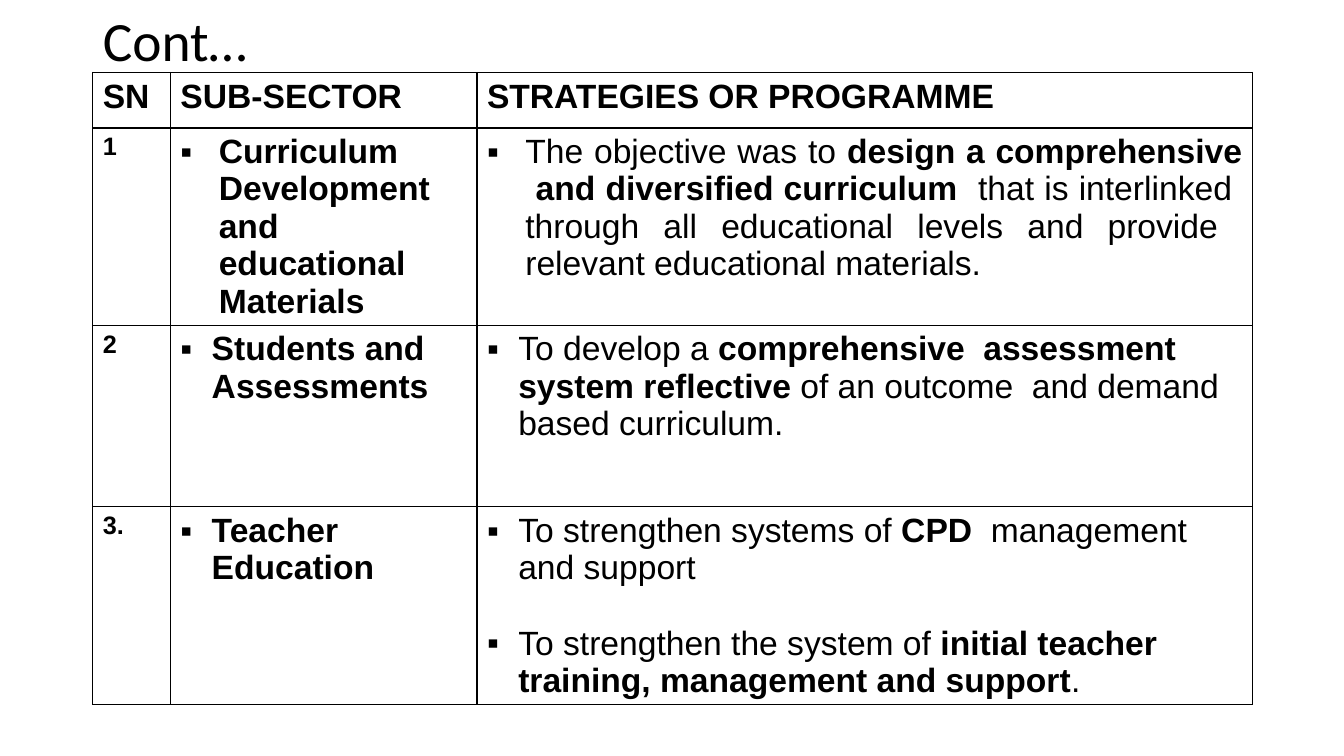
from dataclasses import dataclass

from lxml.etree import SubElement
from pptx import Presentation
from pptx.dml.color import RGBColor
from pptx.enum.text import MSO_ANCHOR as Anchor, PP_ALIGN as Align
from pptx.oxml.ns import qn
from pptx.util import Emu, Inches, Pt

PAGE_WIDTH, PAGE_HEIGHT = Inches(13.33), Inches(7.5)
BLACK = "000000"
LEFT, TITLE_TOP, TABLE_TOP = 6.9, 2.13, 9.6
COLUMN_SHARES = (5.78, 22.81, 57.69)
ROW_SHARES = (7.33, 24.13, 24, 24)
TABLE_WIDTH = sum(COLUMN_SHARES)


@dataclass(frozen=True)
class Entry:
    spans: tuple[str, ...]
    starts_bold: bool = True
    size: float = 24
    indent: float = 0
    align: Align = Align.LEFT
    space_before: float = 0


def across(percent: float) -> Emu:
    return Emu(round(PAGE_WIDTH * percent / 100))


def down(percent: float) -> Emu:
    return Emu(round(PAGE_HEIGHT * percent / 100))


def colour(value: str) -> RGBColor:
    return RGBColor.from_string(value)


def style_font(font, name: str, size: float) -> None:
    font.name, font.size = name, Pt(size)
    font.color.rgb = colour(BLACK)


def add_bullet(para, indent: float) -> None:
    properties = para._p.get_or_add_pPr()
    properties.set("marL", str(Inches(indent)))
    properties.set("indent", str(-Inches(indent)))
    SubElement(properties, qn("a:buFont"), typeface="Arial")
    SubElement(properties, qn("a:buChar"), char="▪")


def write_entry(para, entry: Entry) -> None:
    para.alignment = entry.align
    if entry.space_before:
        para.space_before = Pt(entry.space_before)
    if entry.indent:
        add_bullet(para, entry.indent)
    style_font(para.font, "Arial", entry.size)
    if len(entry.spans) == 1:
        para.font.bold = entry.starts_bold
    for index, text in enumerate(entry.spans):
        span = para.add_run()
        span.text = text
        if len(entry.spans) > 1:
            span.font.bold = entry.starts_bold == (index % 2 == 0)


def outline_cell(cell) -> None:
    properties = cell._tc.get_or_add_tcPr()
    for side in ("lnL", "lnR", "lnT", "lnB"):
        line = SubElement(properties, qn(f"a:{side}"), w=str(Pt(1)))
        fill = SubElement(line, qn("a:solidFill"))
        SubElement(fill, qn("a:srgbClr"), val=BLACK)


def fill_cell(cell, entries: tuple[Entry, ...]) -> None:
    outline_cell(cell)
    cell.fill.background()
    frame = cell.text_frame
    for index, entry in enumerate(entries):
        para = frame.add_paragraph() if index else frame.paragraphs[0]
        write_entry(para, entry)


def number(text: str) -> tuple[Entry, ...]:
    return (Entry((text,), size=18),)


def sector(text: str) -> tuple[Entry, ...]:
    return (Entry((text,), indent=0.31),)


def strategy(*spans: str, space_before: float = 0) -> Entry:
    return Entry(spans, starts_bold=False, indent=0.31, space_before=space_before)


ROWS = (
    tuple((Entry((text,)),) for text in ("SN", "SUB-SECTOR", "STRATEGIES OR PROGRAMME")),
    (
        number("1"),
        (Entry(("Curriculum Development  and educational Materials",),
               indent=0.38, align=Align.JUSTIFY),),
        (Entry(("The objective was to ",
                "design a comprehensive  and diversified curriculum ",
                " that is interlinked  through all educational levels and provide"
                "  relevant educational materials."),
               starts_bold=False, indent=0.38, align=Align.JUSTIFY),),
    ),
    (
        number("2"),
        sector("Students and Assessments"),
        (strategy("To develop a ", "comprehensive  assessment system reflective",
                  " of an outcome  and demand based curriculum."),),
    ),
    (
        number("3."),
        sector("Teacher Education"),
        (strategy("To strengthen systems of ", "CPD", "  management and support"),
         strategy("To strengthen the system of ",
                  "initial teacher  training, management and support", ".",
                  space_before=27)),
    ),
)


def add_title(page) -> None:
    title = page.shapes.title
    title.left, title.top = across(LEFT), down(TITLE_TOP)
    title.width, title.height = across(TABLE_WIDTH), down(ROW_SHARES[0])
    frame = title.text_frame
    frame.text = "Cont…"
    frame.vertical_anchor = Anchor.MIDDLE
    para = frame.paragraphs[0]
    para.alignment = Align.LEFT
    para.line_spacing = 0.9
    style_font(para.font, "Calibri", 39.6)


def add_strategy_table(page) -> None:
    table = page.shapes.add_table(
        len(ROWS), len(COLUMN_SHARES), across(LEFT), down(TABLE_TOP),
        across(TABLE_WIDTH), down(sum(ROW_SHARES))).table
    table.first_row = table.horz_banding = False
    for column, share in zip(table.columns, COLUMN_SHARES):
        column.width = across(share)
    for row, share, contents in zip(table.rows, ROW_SHARES, ROWS):
        row.height = down(share)
        for cell, entries in zip(row.cells, contents):
            fill_cell(cell, entries)


def main() -> None:
    deck = Presentation()
    deck.slide_width, deck.slide_height = PAGE_WIDTH, PAGE_HEIGHT
    page = deck.slides.add_slide(deck.slide_layouts[5])
    add_title(page)
    add_strategy_table(page)
    deck.save("out.pptx")


if __name__ == "__main__":
    main()
